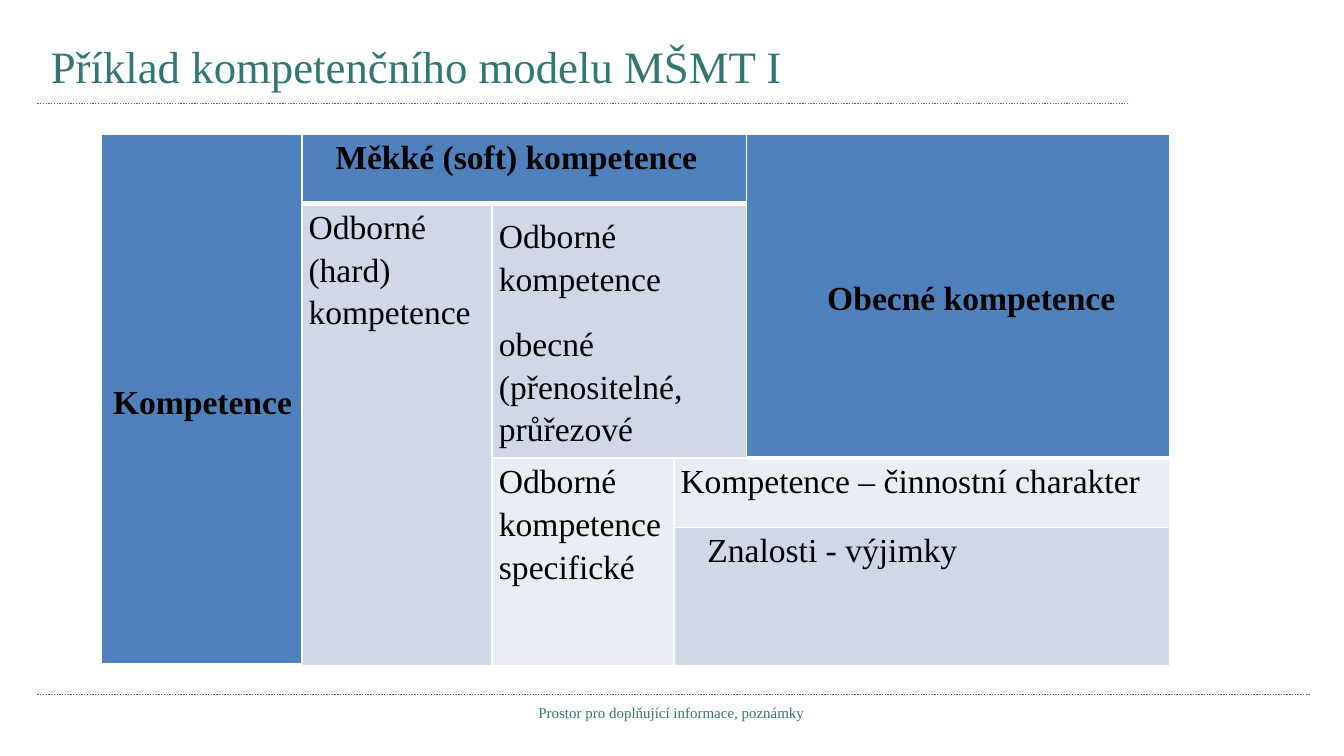
"""Build the slide with the competence model table."""
from dataclasses import dataclass

from lxml import etree
from pptx import Presentation
from pptx.dml.color import RGBColor
from pptx.enum.dml import MSO_LINE
from pptx.enum.shapes import MSO_CONNECTOR
from pptx.enum.text import MSO_ANCHOR, MSO_AUTO_SIZE, PP_ALIGN
from pptx.oxml.ns import qn
from pptx.util import Pt

LEFT, CENTER, JUSTIFY = PP_ALIGN.LEFT, PP_ALIGN.CENTER, PP_ALIGN.JUSTIFY
TOP, MIDDLE = MSO_ANCHOR.TOP, MSO_ANCHOR.MIDDLE
STRAIGHT, DOTTED = MSO_CONNECTOR.STRAIGHT, MSO_LINE.ROUND_DOT


@dataclass(frozen=True)
class Theme:
    font: str = "Times New Roman"
    accent: str = "307871"
    text: str = "000000"
    border: str = "FFFFFF"
    header: str = "4F81BD"
    dark: str = "D0D8E8"
    light: str = "E9EDF4"
    title_size: float = 24
    table_size: float = 18
    footer_size: float = 8


theme = Theme()


def write(tf, text, size=theme.table_size, color=theme.text, bold=False,
          align=LEFT, indent=0, spacing=1, after=0, gap=0):
    for i, line in enumerate(text.split("\n")):
        p = tf.add_paragraph() if i else tf.paragraphs[0]
        p.alignment = align
        p.line_spacing = spacing
        p.space_before = Pt(gap if i else 0)
        p.space_after = Pt(after)
        p._p.get_or_add_pPr().set("indent", str(Pt(indent)))
        r = p.add_run()
        r.text = line
        r.font.name = theme.font
        r.font.size = Pt(size)
        r.font.bold = bold
        r.font.color.rgb = RGBColor.from_string(color)


def add_border(cell, side, width):
    ln = etree.SubElement(cell._tc.get_or_add_tcPr(), qn(f"a:ln{side}"), w=str(Pt(width)))
    fill = etree.SubElement(ln, qn("a:solidFill"))
    etree.SubElement(fill, qn("a:srgbClr"), val=theme.border)


prs = Presentation()
prs.slide_width, prs.slide_height = Pt(720), Pt(405)
s = prs.slides.add_slide(prs.slide_layouts[5])

for y, right in ((55.4, 604), (372.2, 702)):
    line = s.shapes.add_connector(STRAIGHT, Pt(20), Pt(y), Pt(right), Pt(y))
    line.line.color.rgb = RGBColor.from_string(theme.accent)
    line.line.width = Pt(0.75)
    line.line.dash_style = DOTTED
    etree.SubElement(line._element.spPr, qn("a:effectLst"))

title = s.shapes.title
title.left, title.top, title.width, title.height = Pt(20), Pt(15), Pt(476), Pt(40)
title.text_frame.auto_size = MSO_AUTO_SIZE.NONE
title.text_frame.vertical_anchor = MIDDLE
write(title.text_frame, "Příklad kompetenčního modelu MŠMT I",
      size=theme.title_size, color=theme.accent)

footer = s.shapes.add_textbox(Pt(212.5), Pt(372.2), Pt(294.5), Pt(16.5))
footer.text_frame.word_wrap = True
footer.text_frame.margin_top = Pt(4.6)
write(footer.text_frame, "Prostor pro doplňující informace, poznámky",
      size=theme.footer_size, color=theme.accent, align=CENTER)

widths = (107.7, 102, 97.3, 38.9, 226.7)
heights = (37.2, 129, 37.2, 74.2)
table = s.shapes.add_table(len(heights), len(widths), Pt(54), Pt(72),
                           Pt(sum(widths)), Pt(sum(heights))).table
for column, width in zip(table.columns, widths):
    column.width = Pt(width)
for row, height in zip(table.rows, heights):
    row.height = Pt(height)

cells = (
    (0, 0, 4, 1, theme.header, MIDDLE, "Kompetence", CENTER, 1.4),
    (0, 1, 1, 3, theme.header, TOP, "Měkké (soft) kompetence", JUSTIFY, 14.4),
    (0, 4, 2, 1, theme.header, MIDDLE, "Obecné kompetence", CENTER, 14.4),
    (1, 1, 3, 1, theme.dark, TOP, "Odborné (hard) kompetence", JUSTIFY, 0),
    (1, 2, 1, 2, theme.dark, MIDDLE,
     "Odborné kompetence\nobecné (přenositelné, průřezové", LEFT, 0),
    (2, 2, 2, 1, theme.light, TOP, "Odborné kompetence specifické", JUSTIFY, 0),
    (2, 3, 1, 2, theme.light, TOP, "Kompetence – činnostní charakter", JUSTIFY, 0),
    (3, 3, 1, 2, theme.dark, TOP, "Znalosti - výjimky", JUSTIFY, 14.4),
)
for row, col, rows, cols, fill, anchor, text, align, indent in cells:
    is_header = fill == theme.header
    borders = {"L": 1, "R": 1, "T": 1, "B": 3} if is_header else {"L": 1, "R": 1, "B": 1}
    cell = table.cell(row, col)
    if rows * cols > 1:
        cell.merge(table.cell(row + rows - 1, col + cols - 1))
    for r in range(row, row + rows):
        for c in range(col, col + cols):
            part = table.cell(r, c)
            for side, width in borders.items():
                add_border(part, side, width)
            part.fill.solid()
            part.fill.fore_color.rgb = RGBColor.from_string(fill)
    cell.margin_left = cell.margin_right = Pt(3.6)
    cell.margin_top = cell.margin_bottom = Pt(0)
    cell.vertical_anchor = anchor
    write(cell.text_frame, text, bold=is_header, align=align, indent=indent,
          spacing=1.15, after=0 if "\n" in text else 12, gap=12)

prs.save("out.pptx")
